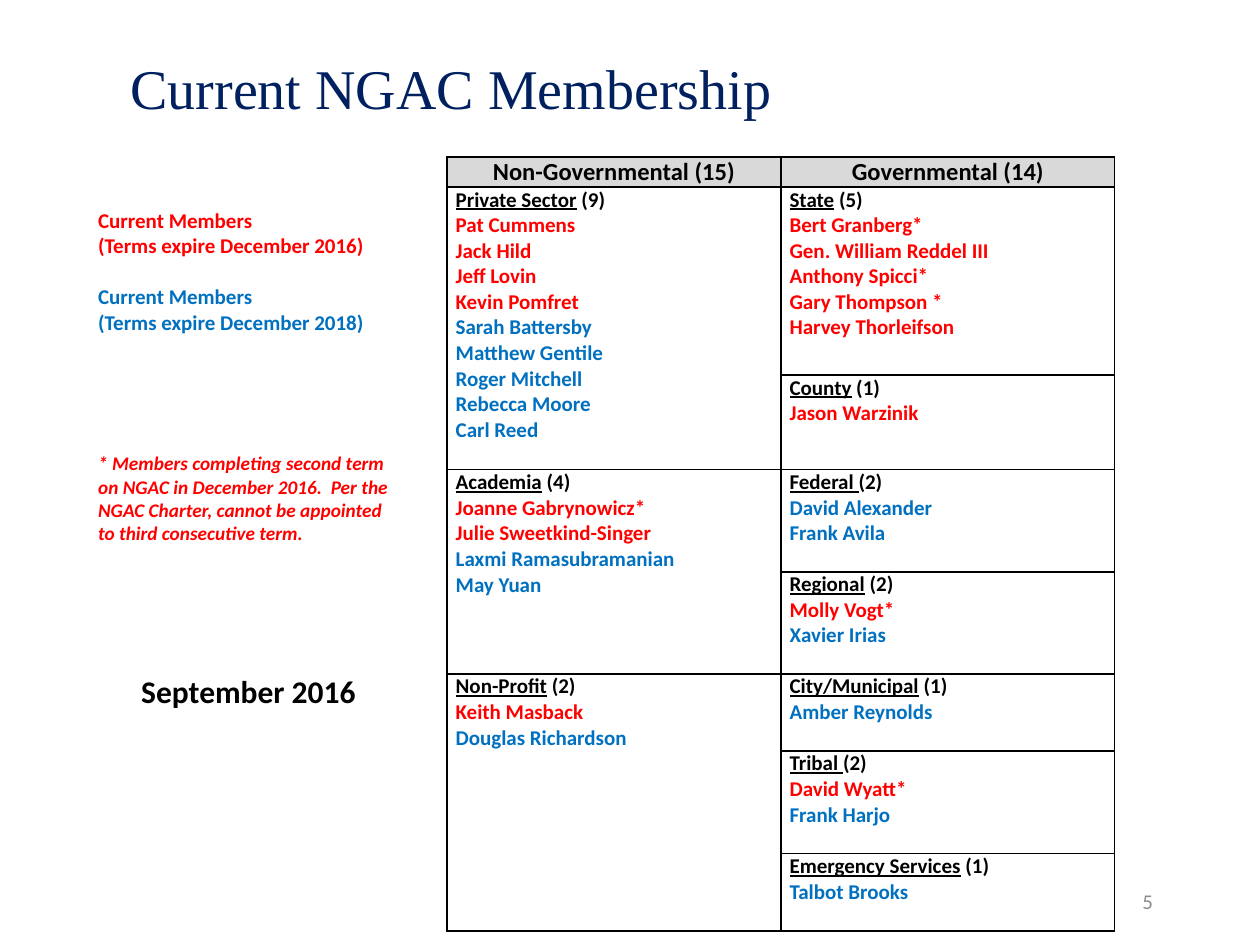
from lxml import etree
from pptx import Presentation
from pptx.dml.color import RGBColor
from pptx.enum import text
from pptx.oxml.ns import qn
from pptx.util import Pt

COLORS = {"navy": "002060", "grey": "8C8C8C", "header": "D9D9D9", "white": "FFFFFF",
          "black": "000000", "red": "FF0000", "blue": "0070C0"}
LEFT, CENTER, RIGHT = text.PP_ALIGN.LEFT, text.PP_ALIGN.CENTER, text.PP_ALIGN.RIGHT

prs = Presentation()
prs.slide_width, prs.slide_height = Pt(720), Pt(540)
s = prs.slides.add_slide(prs.slide_layouts[6])


def add_text(tf, paragraphs):
    """Fill a frame from (runs, alignment, space before); a run is (text, colour, formats)."""
    for i, (runs, align, gap) in enumerate(paragraphs):
        p = tf.paragraphs[0] if i == 0 else tf.add_paragraph()
        p.alignment = align
        if gap:
            p.space_before = Pt(gap)
        for words, color, formats in runs:
            r = p.add_run()
            r.text = words
            for name, value in ({"name": "Calibri", "size": Pt(12)} | formats).items():
                setattr(r.font, name, value)
            r.font.color.rgb = RGBColor.from_string(COLORS[color])


def add_box(left, top, width, height, anchor, paragraphs):
    tf = s.shapes.add_textbox(Pt(left), Pt(top), Pt(width), Pt(height)).text_frame
    tf.word_wrap = True
    tf.vertical_anchor = anchor
    add_text(tf, paragraphs)
    return tf


BOLD = {"bold": True}
MIDDLE, TOP = text.MSO_ANCHOR.MIDDLE, text.MSO_ANCHOR.TOP

title = add_box(67.5, 24, 594, 56, MIDDLE, [
    ([("Current NGAC Membership", "navy", {"name": "Times New Roman", "size": Pt(32)})], LEFT, 0)])
title.paragraphs[0].line_spacing = 0.9
add_box(504, 500.5, 162, 28.75, MIDDLE, [([("5", "grey", {})], RIGHT, 0)])

note = ("* Members completing second term on NGAC in December 2016.  Per the NGAC Charter, "
        "cannot be appointed to third consecutive term.")
add_box(49, 115.2, 186, 294.5, TOP, [
    ([("Current Members", "red", BOLD)], LEFT, 0),
    ([("(Terms expire December 2016)", "red", BOLD)], LEFT, 0),
    ([("Current Members", "blue", BOLD)], LEFT, 14.65),
    ([("(Terms expire December 2018)", "blue", BOLD)], LEFT, 0),
    ([(note, "red", BOLD | {"italic": True, "size": Pt(11)})], LEFT, 67.1),
    ([("September 2016", "black", BOLD | {"size": Pt(18)})], CENTER, 73.2),
])

# (row, column, rows spanned, group, count, members expiring 2016, members expiring 2018)
groups = [
    (1, 0, 2, "Private Sector", " (9)",
     ["Pat Cummens", "Jack Hild", "Jeff Lovin", "Kevin Pomfret"],
     ["Sarah Battersby", "Matthew Gentile", "Roger Mitchell", "Rebecca Moore", "Carl Reed"]),
    (3, 0, 2, "Academia", " (4)", ["Joanne Gabrynowicz*", "Julie Sweetkind-Singer"],
     ["Laxmi Ramasubramanian", "May Yuan"]),
    (5, 0, 3, "Non-Profit", " (2)", ["Keith Masback"], ["Douglas Richardson"]),
    (1, 1, 1, "State", " (5)",
     ["Bert Granberg*", "Gen. William Reddel III", "Anthony Spicci*", "Gary Thompson *",
      "Harvey Thorleifson"], []),
    (2, 1, 1, "County", " (1)", ["Jason Warzinik"], []),
    (3, 1, 1, "Federal ", "(2)", [], ["David Alexander", "Frank Avila"]),
    (4, 1, 1, "Regional", " (2)", ["Molly Vogt*"], ["Xavier Irias"]),
    (5, 1, 1, "City/Municipal", " (1)", [], ["Amber Reynolds"]),
    (6, 1, 1, "Tribal ", "(2)", ["David Wyatt*"], ["Frank Harjo"]),
    (7, 1, 1, "Emergency Services", " (1)", [], ["Talbot Brooks"]),
]
row_heights = [17.1, 107.5, 54, 58.4, 58.4, 44, 58.6, 44.2]

table = s.shapes.add_table(len(row_heights), 2, Pt(255.4), Pt(89.8), Pt(381.6),
                           Pt(sum(row_heights))).table
for column in table.columns:
    column.width = Pt(190.8)
for i, height in enumerate(row_heights):
    table.rows[i].height = Pt(height)
    for cell in table.rows[i].cells:
        cell.margin_left = cell.margin_right = Pt(5)
        cell.margin_top = cell.margin_bottom = 0
        tcPr = cell._tc.get_or_add_tcPr()
        for side in ("a:lnL", "a:lnR", "a:lnT", "a:lnB"):
            line = etree.SubElement(tcPr, qn(side), w=str(Pt(1)))
            fill = etree.SubElement(line, qn("a:solidFill"))
            etree.SubElement(fill, qn("a:srgbClr"), val=COLORS["black"])
        cell.fill.solid()
        cell.fill.fore_color.rgb = RGBColor.from_string(COLORS["white" if i else "header"])

for col, heading in enumerate(["Non-Governmental (15)", "Governmental (14)"]):
    add_text(table.cell(0, col).text_frame,
             [([(heading, "black", BOLD | {"size": Pt(14)})], CENTER, 0)])
for row, col, span, group, count, until_2016, until_2018 in groups:
    cell = table.cell(row, col)
    if span > 1:
        cell.merge(table.cell(row + span - 1, col))
    heading = [(group, "black", BOLD | {"underline": True}), (count, "black", BOLD)]
    members = [(m, "red", BOLD) for m in until_2016] + [(m, "blue", BOLD) for m in until_2018]
    add_text(cell.text_frame, [(heading, LEFT, 0)] + [([m], LEFT, 0) for m in members])

prs.save("out.pptx")
